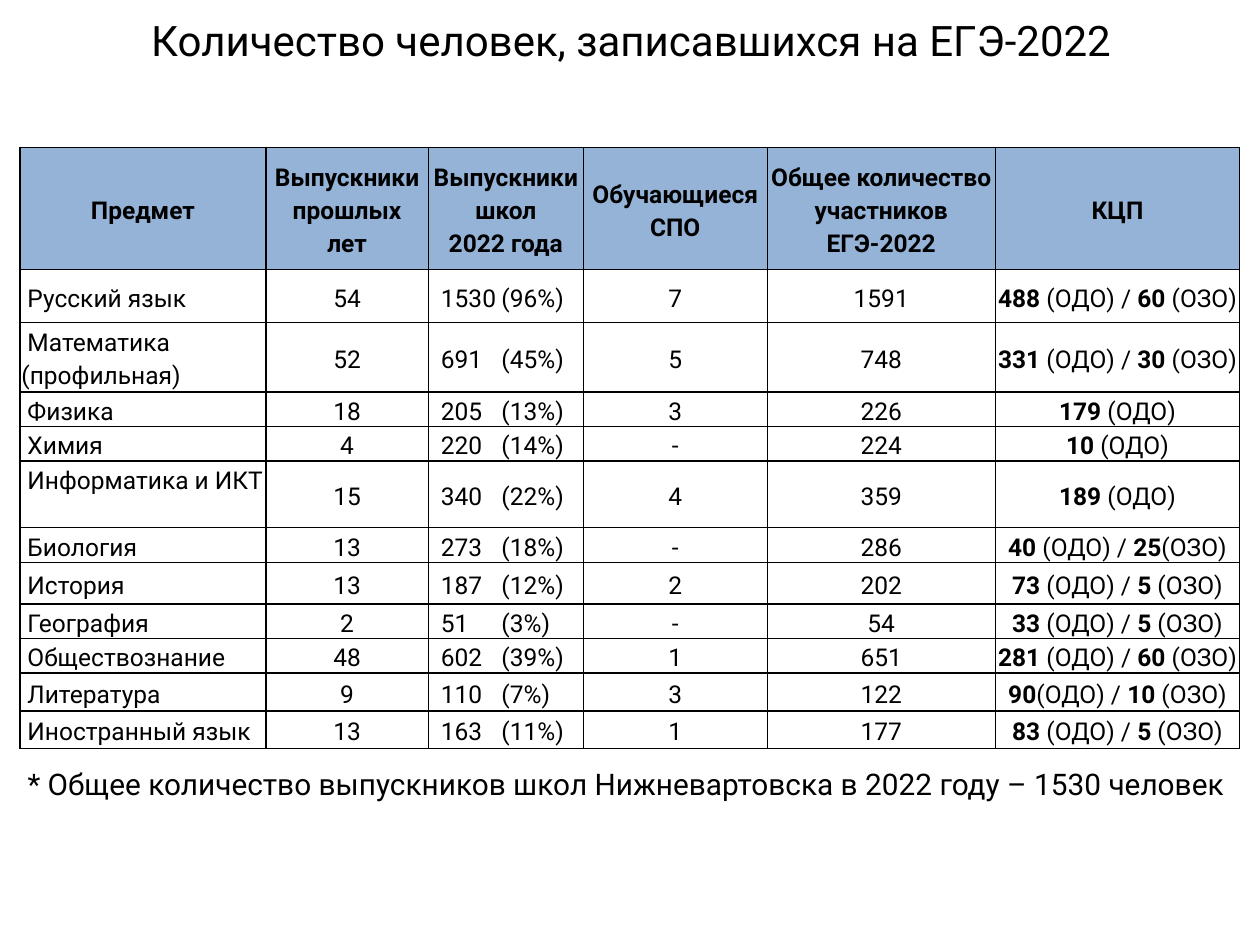
from pptx import Presentation
from pptx import util as u
from pptx.dml.color import RGBColor
from pptx.enum import text
from pptx.oxml import parse_xml
from pptx.oxml.ns import nsdecls

FONT = "Roboto"
COLORS = {"text": "000000", "header": "95B3D7", "border": "000000"}
CENTER, LEFT = text.PP_ALIGN.CENTER, text.PP_ALIGN.LEFT


def add_run(p, words, size, bold=False):
    r = p.add_run()
    r.text = words
    r.font.name, r.font.size, r.font.bold = FONT, u.Pt(size), bold
    r.font.color.rgb = RGBColor.from_string(COLORS["text"])


def format_cell(cell, align):
    cell.margin_left = cell.margin_right = cell.margin_top = u.Inches(0.01)
    cell.margin_bottom = 0
    cell.vertical_anchor = text.MSO_ANCHOR.MIDDLE
    tc_pr = cell._tc.get_or_add_tcPr()
    for side in "LRTB":
        tc_pr.append(parse_xml(
            f'<a:ln{side} {nsdecls("a")} w="12700"><a:solidFill>'
            f'<a:srgbClr val="{COLORS["border"]}"/></a:solidFill></a:ln{side}>'))
    p = cell.text_frame.paragraphs[0]
    p.alignment, p.line_spacing, p.space_after = align, 1.15, u.Pt(10)
    return p


prs = Presentation()
prs.slide_width, prs.slide_height = u.Inches(10), u.Inches(7.5)
s = prs.slides.add_slide(prs.slide_layouts[5])

# Title
sp = s.shapes.title
sp.left, sp.top, sp.width, sp.height = [u.Inches(v) for v in (0.51, 0, 9, 0.63)]
tf = sp.text_frame
tf.vertical_anchor = text.MSO_ANCHOR.MIDDLE
p = tf.paragraphs[0]
p.alignment = CENTER
add_run(p, "Количество человек, записавшихся на ЕГЭ-2022", 24)

# Table data: "/" in a list of header lines is a break; "|" toggles bold in the last column
headers = [["Предмет"], ["Выпускники", "прошлых", "лет"],
           ["Выпускники", "школ", "2022 года"], ["Обучающиеся", "СПО"],
           ["Общее количество", "участников", "ЕГЭ-2022"], ["КЦП"]]
subjects = [
    ("Русский язык", "54", "1530", "96%", "7", "1591", "488| (ОДО) / |60| (ОЗО)"),
    ("Математика (профильная)", "52", "691", "45%", "5", "748", "331| (ОДО) / |30| (ОЗО)"),
    ("Физика", "18", "205", "13%", "3", "226", "179| (ОДО)"),
    ("Химия", "4", "220", "14%", "-", "224", "10| (ОДО)"),
    ("Информатика и ИКТ", "15", "340", "22%", "4", "359", "189| (ОДО)"),
    ("Биология", "13", "273", "18%", "-", "286", "40| (ОДО) / |25|(ОЗО)"),
    ("История", "13", "187", "12%", "2", "202", "73| (ОДО) / |5| (ОЗО)"),
    ("География", "2", "51", "3%", "-", "54", "33| (ОДО) / |5| (ОЗО)"),
    ("Обществознание", "48", "602", "39%", "1", "651", "281| (ОДО) / |60| (ОЗО)"),
    ("Литература", "9", "110", "7%", "3", "122", "90|(ОДО) / |10| (ОЗО)"),
    ("Иностранный язык", "13", "163", "11%", "1", "177", "83| (ОДО) / |5| (ОЗО)"),
]
col_widths = [1.95, 1.29, 1.23, 1.46, 1.81, 1.94]
row_heights = [0.97, 0.42, 0.55, 0.27, 0.27, 0.53, 0.27, 0.33, 0.27, 0.27, 0.3, 0.3]

# Table grid
table = s.shapes.add_table(
    len(row_heights), len(col_widths), u.Inches(0.16), u.Inches(1.17),
    u.Inches(sum(col_widths)), u.Inches(sum(row_heights))).table
for col, width in zip(table.columns, col_widths):
    col.width = u.Inches(width)
for row, height in zip(table.rows, row_heights):
    row.height = u.Inches(height)

# Header row
for cell, lines in zip(table.rows[0].cells, headers):
    p = format_cell(cell, CENTER)
    cell.fill.solid()
    cell.fill.fore_color.rgb = RGBColor.from_string(COLORS["header"])
    for i, line in enumerate(lines):
        if i:
            p.add_line_break()
        add_run(p, line, 14, True)

# Subject rows
for i, (subject, past, school, share, college, total, places) in enumerate(subjects, 1):
    values = [" " + subject, past, f"{school}\t({share})", college, total, places]
    for j, value in enumerate(values):
        cell = table.cell(i, j)
        p = format_cell(cell, LEFT if j in (0, 2) else CENTER)
        cell.fill.background()
        if j == 2:  # count and share line up on a tab stop
            cell.margin_left = u.Inches(0.1)
            p._p.get_or_add_pPr().append(parse_xml(
                f'<a:tabLst {nsdecls("a")}><a:tab pos="{u.Inches(0.48)}" algn="l"/></a:tabLst>'))
        for k, part in enumerate(value.split("|")):
            add_run(p, part, 14, j == 5 and k % 2 == 0)
        if subject == "Информатика и ИКТ" and j == 0:
            cell.vertical_anchor = text.MSO_ANCHOR.TOP

# Footnote
sp = s.shapes.add_textbox(u.Inches(0.12), u.Inches(6.03), u.Inches(9.88), u.Inches(0.39))
tf = sp.text_frame
tf.word_wrap = True
tf.auto_size = text.MSO_AUTO_SIZE.SHAPE_TO_FIT_TEXT
add_run(tf.paragraphs[0],
        "* Общее количество выпускников школ Нижневартовска в 2022 году – 1530 человек", 17)

prs.save("out.pptx")
